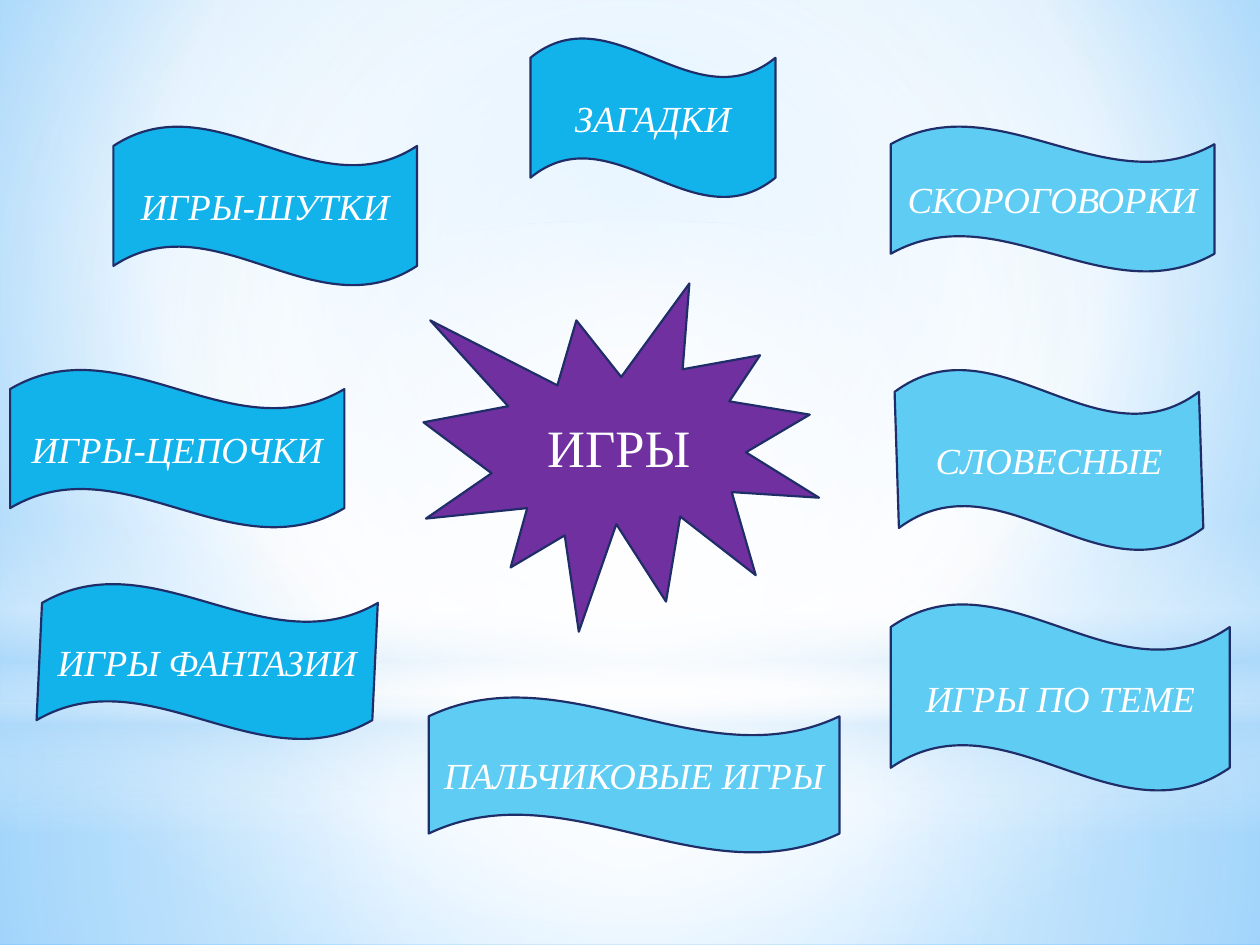
from dataclasses import dataclass
from typing import Any, Optional

from lxml import etree
from pptx import Presentation
from pptx.dml.color import RGBColor
from pptx.enum.shapes import MSO_SHAPE
from pptx.enum.text import MSO_ANCHOR, PP_ALIGN
from pptx.oxml.ns import qn
from pptx.util import Pt

RECT, OVAL = MSO_SHAPE.RECTANGLE, MSO_SHAPE.OVAL
WAVE, BURST = MSO_SHAPE.WAVE, MSO_SHAPE.EXPLOSION1
MIDDLE, CENTER = MSO_ANCHOR.MIDDLE, PP_ALIGN.CENTER

COLORS = {
    "white": "FFFFFF",
    "haze": "B4DCFA",
    "sky": "9ED5FF",
    "edge": "5BB9FF",
    "blue": "12B2EB",
    "light": "5ECCF3",
    "purple": "7030A0",
    "outline": "1F2E69",
}
WIDTH, HEIGHT = 720, 540
HORIZON = 402
CENTERED = (50, 50, 50, 50)


@dataclass
class Stop:
    pos: int
    color: str
    alpha: int = 100


@dataclass
class Glow:
    kind: Any
    box: tuple[float, float, float, float]
    stops: list[Stop]
    focus: Optional[tuple[int, int, int, int]] = CENTERED


@dataclass
class Label:
    text: str
    box: tuple[float, float, float, float]
    color: str = "blue"
    skew: float = 0
    kind: Any = WAVE
    size: int = 21
    italic: bool = True


SKY = [Stop(0, "sky"), Stop(60, "white"), Stop(100, "edge")]
GLOWS = [
    Glow(RECT, (0, HORIZON, WIDTH, HEIGHT - HORIZON),
         [Stop(0, "white", 91), Stop(37, "white", 76), Stop(100, "haze", 79)]),
    Glow(RECT, (0, 0, WIDTH, HORIZON),
         [Stop(0, "white", 89), Stop(48, "white", 62), Stop(100, "haze", 79)]),
    Glow(RECT, (0, 296.6, WIDTH, 180),
         [Stop(0, "white", 0), Stop(29, "white", 30), Stop(45, "haze", 40),
          Stop(55, "white", 26), Stop(65, "haze", 60), Stop(100, "white", 0)], None),
    Glow(OVAL, (0, 126, WIDTH, HORIZON), [Stop(0, "white"), Stop(56, "white", 0)]),
]
LABELS = [
    Label("ИГРЫ", (242, 162, 226, 199), "purple", kind=BURST, size=30, italic=False),
    Label("ИГРЫ-ШУТКИ", (64.8, 72, 173.5, 91.4)),
    Label("ИГРЫ-ЦЕПОЧКИ", (5.8, 211, 191, 90.7)),
    Label("ИГРЫ ФАНТАЗИИ", (20.9, 333.4, 195, 89.3), skew=-0.008),
    Label("ПАЛЬЧИКОВЫЕ ИГРЫ", (245, 398.2, 234.7, 89.3), "light"),
    Label("ЗАГАДКИ", (303.1, 21.6, 140, 91.4)),
    Label("СКОРОГОВОРКИ", (509, 72, 185, 83.5), "light"),
    Label("СЛОВЕСНЫЕ", (511.2, 211, 176.4, 103.7), "light", skew=0.007),
    Label("ИГРЫ ПО ТЕМЕ", (509, 344.9, 193.7, 107.3), "light"),
]


def rgb(name: str) -> RGBColor:
    return RGBColor.from_string(COLORS[name])


def set_gradient(owner: Any, stops: list[Stop],
                 focus: Optional[tuple[int, int, int, int]]) -> None:
    grad = next(owner.iter(qn("a:gradFill")))
    grad.clear()
    grad.set("rotWithShape", "1")
    stop_list = etree.SubElement(grad, qn("a:gsLst"))
    for stop in stops:
        gs = etree.SubElement(stop_list, qn("a:gs"), pos=str(stop.pos * 1000))
        color = etree.SubElement(gs, qn("a:srgbClr"), val=COLORS[stop.color])
        if stop.alpha < 100:
            etree.SubElement(color, qn("a:alpha"), val=str(stop.alpha * 1000))
    if focus is None:
        etree.SubElement(grad, qn("a:lin"), ang="5400000", scaled="0")
        return
    shade = etree.SubElement(grad, qn("a:path"))
    shade.set("path", "circle")
    target = etree.SubElement(shade, qn("a:fillToRect"))
    for side, value in zip("ltrb", focus):
        target.set(side, str(value * 1000))


def add_shape(s: Any, kind: Any, box: tuple[float, float, float, float]) -> Any:
    sp = s.shapes.add_shape(kind, *map(Pt, box))
    sp.shadow.inherit = False
    return sp


def add_glow(s: Any, glow: Glow) -> None:
    sp = add_shape(s, glow.kind, glow.box)
    sp.line.fill.background()
    sp.fill.gradient()
    set_gradient(sp.element, glow.stops, glow.focus)


def add_label(s: Any, label: Label) -> None:
    sp = add_shape(s, label.kind, label.box)
    if label.skew:
        sp.adjustments[1] = label.skew
    sp.fill.solid()
    sp.fill.fore_color.rgb = rgb(label.color)
    sp.line.color.rgb = rgb("outline")
    sp.line.width = Pt(1.25)
    tf = sp.text_frame
    tf.word_wrap = True
    tf.vertical_anchor = MIDDLE
    p = tf.paragraphs[0]
    p.alignment = CENTER
    r = p.add_run()
    r.text = label.text
    font = {"name": "Times New Roman", "size": Pt(label.size), "italic": label.italic}
    for name, value in font.items():
        setattr(r.font, name, value)
    r.font.color.rgb = rgb("white")


def main() -> None:
    prs = Presentation()
    prs.slide_width, prs.slide_height = Pt(WIDTH), Pt(HEIGHT)
    s = prs.slides.add_slide(prs.slide_layouts[6])
    s.background.fill.gradient()
    set_gradient(s.element, SKY, (20, 10, 20, 60))
    for glow in GLOWS:
        add_glow(s, glow)
    for label in LABELS:
        add_label(s, label)
    prs.save("out.pptx")


if __name__ == "__main__":
    main()
